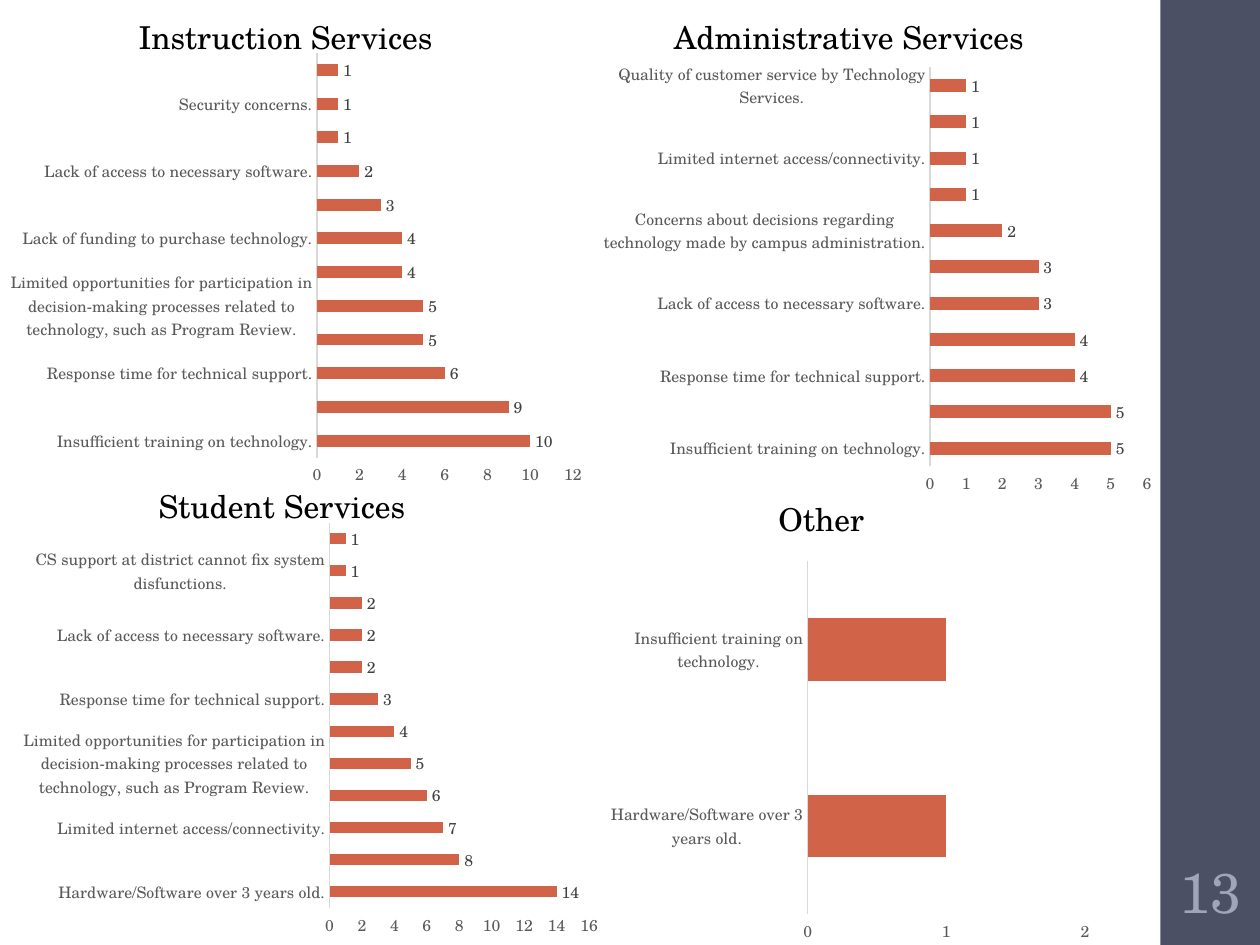
from dataclasses import dataclass

from lxml import etree
from pptx import Presentation
from pptx.chart.data import CategoryChartData
from pptx.dml.color import RGBColor
from pptx.enum.chart import XL_CHART_TYPE, XL_LABEL_POSITION, XL_TICK_MARK
from pptx.enum.shapes import MSO_SHAPE
from pptx.enum.text import MSO_ANCHOR, MSO_AUTO_SIZE, PP_ALIGN
from pptx.oxml.ns import qn
from pptx.util import Inches, Pt

BAR = XL_CHART_TYPE.BAR_CLUSTERED
OUTSIDE_END = XL_LABEL_POSITION.OUTSIDE_END
NO_TICK = XL_TICK_MARK.NONE
RECT = MSO_SHAPE.RECTANGLE
MIDDLE = MSO_ANCHOR.MIDDLE
TOP = MSO_ANCHOR.TOP
LEFT, CENTER = PP_ALIGN.LEFT, PP_ALIGN.CENTER
NO_FIT = MSO_AUTO_SIZE.NONE


@dataclass(frozen=True)
class Theme:
    font: str = "TeX Gyre Schola"
    band: str = "4B5064"
    number: str = "A0A5B8"
    heading: str = "000000"
    bar: str = "D16349"
    axis_text: str = "595959"
    axis_line: str = "D9D9D9"
    label: str = "404040"
    heading_size: float = 18
    number_size: float = 32
    chart_size: float = 10
    label_size: float = 9


# Answers shared by the four charts
TRAINING = "Insufficient training on technology."
HARDWARE = "Hardware/Software over 3 years old."
INTERNET = "Limited internet access/connectivity."
FUNDING = "Lack of funding to purchase technology."
PARTICIPATION = ("Limited opportunities for participation in decision-making "
                 "processes related to technology, such as Program Review.")
SECURITY = "Security concerns."
RESPONSE = "Response time for technical support."
QUALITY = "Quality of customer service by Technology Services."
SOFTWARE = "Lack of access to necessary software."
DECISIONS = ("Concerns about decisions regarding technology made by "
             "campus administration.")
DISTRICT = "CS support at district cannot fix system disfunctions."
UNNAMED = ""

# Bars from bottom to top; every second bar has no name
STUDENT = [(HARDWARE, 14), (UNNAMED, 8), (INTERNET, 7), (UNNAMED, 6),
           (PARTICIPATION, 5), (UNNAMED, 4), (RESPONSE, 3), (UNNAMED, 2),
           (SOFTWARE, 2), (UNNAMED, 2), (DISTRICT, 1), (UNNAMED, 1)]
INSTRUCTION = [(TRAINING, 10), (UNNAMED, 9), (RESPONSE, 6), (UNNAMED, 5),
               (PARTICIPATION, 5), (UNNAMED, 4), (FUNDING, 4), (UNNAMED, 3),
               (SOFTWARE, 2), (UNNAMED, 1), (SECURITY, 1), (UNNAMED, 1)]
ADMINISTRATIVE = [(TRAINING, 5), (UNNAMED, 5), (RESPONSE, 4), (UNNAMED, 4),
                  (SOFTWARE, 3), (UNNAMED, 3), (DECISIONS, 2), (UNNAMED, 1),
                  (INTERNET, 1), (UNNAMED, 1), (QUALITY, 1)]
OTHER_GROUP = [(HARDWARE, 1), (TRAINING, 1)]


class SlideBuilder:
    def __init__(self, s, theme):
        self.s, self.theme = s, theme

    def style_font(self, font, size, color):
        for name, value in {"name": self.theme.font, "size": Pt(size), "bold": False}.items():
            setattr(font, name, value)
        font.color.rgb = RGBColor.from_string(color)

    def band(self, *box):
        sp = self.s.shapes.add_shape(RECT, *map(Inches, box))
        sp.shadow.inherit = False
        sp.fill.solid()
        sp.fill.fore_color.rgb = RGBColor.from_string(self.theme.band)
        sp.line.fill.background()

    def text(self, sp, text, box, size, color, align=LEFT, **frame):
        sp.left, sp.top, sp.width, sp.height = map(Inches, box)
        tf = sp.text_frame
        for name, value in frame.items():
            setattr(tf, name, value)
        p = tf.paragraphs[0]
        p.alignment = align
        r = p.add_run()
        r.text = text
        self.style_font(r.font, size, color)

    def new_box(self):
        return self.s.shapes.add_textbox(0, 0, 0, 0)

    def heading(self, text, box, sp=None):
        self.text(sp or self.new_box(), text, box, self.theme.heading_size,
                  self.theme.heading, word_wrap=False, auto_size=NO_FIT,
                  vertical_anchor=TOP)

    def page_number(self, text, box):
        side = Inches(0.03)
        self.text(self.new_box(), text, box, self.theme.number_size,
                  self.theme.number, CENTER, word_wrap=True,
                  vertical_anchor=MIDDLE, margin_left=side, margin_right=side)

    def bar_chart(self, rows, box, labels=True):
        th = self.theme
        data = CategoryChartData()
        data.categories = [name for name, _ in rows]
        data.add_series("Series 1", [count for _, count in rows])
        chart = self.s.shapes.add_chart(BAR, *map(Inches, box), data).chart
        chart.has_title = chart.has_legend = False
        self.style_font(chart.font, th.chart_size, th.heading)

        # Axes
        for axis in (chart.category_axis, chart.value_axis):
            for name, value in {"major_tick_mark": NO_TICK, "minor_tick_mark": NO_TICK,
                                "has_major_gridlines": False}.items():
                setattr(axis, name, value)
            self.style_font(axis.tick_labels.font, th.label_size, th.axis_text)
        line = chart.category_axis.format.line
        line.width = Pt(0.75)
        line.color.rgb = RGBColor.from_string(th.axis_line)
        chart.value_axis.format.line.fill.background()

        # Bars and their values
        plot = chart.plots[0]
        plot.gap_width = 182
        plot.vary_by_categories = False
        fill = plot.series[0].format.fill
        fill.solid()
        fill.fore_color.rgb = RGBColor.from_string(th.bar)
        if labels:
            plot.has_data_labels = True
            dl = plot.data_labels
            dl.show_value = True
            dl.position = OUTSIDE_END
            self.style_font(dl.font, th.label_size, th.label)
        return chart

    def place_plot(self, chart, x, y, w, h):
        area = chart.plots[0]._element.getparent()
        for old in area.findall(qn("c:layout")):
            area.remove(old)
        layout = etree.Element(qn("c:layout"))
        area.insert(0, layout)
        manual = etree.SubElement(layout, qn("c:manualLayout"))
        values = {"layoutTarget": "inner", "xMode": "edge", "yMode": "edge",
                  "x": x, "y": y, "w": w, "h": h}
        for name, value in values.items():
            etree.SubElement(manual, qn(f"c:{name}")).set("val", str(value))


def main():
    prs = Presentation()
    prs.slide_width, prs.slide_height = Inches(10), Inches(7.5)
    s = prs.slides.add_slide(prs.slide_layouts[5])
    b = SlideBuilder(s, Theme())

    # Side band with the page number
    b.band(9.21, 0, 0.8, 7.5)
    b.page_number("13", (9.23, 6.75, 0.75, 0.65))

    # One chart for each group
    b.bar_chart(STUDENT, (0.09, 4.08, 4.75, 3.42))
    b.bar_chart(INSTRUCTION, (-0.01, 0.35, 4.72, 3.58))
    b.bar_chart(ADMINISTRATIVE, (4.7, 0.42, 4.53, 3.58))
    other = b.bar_chart(OTHER_GROUP, (4.8, 4.29, 3.93, 3.26), labels=False)
    b.place_plot(other, 0.41, 0.05, 0.56, 0.86)
    for name, value in {"minimum_scale": 0, "maximum_scale": 2, "major_unit": 1}.items():
        setattr(other.value_axis, name, value)

    # Headings
    b.heading("Instruction Services", (1, 0.09, 2.55, 0.4), s.shapes.title)
    b.heading("Administrative Services", (5.25, 0.09, 3.01, 0.4))
    b.heading("Student Services", (1.16, 3.82, 2.18, 0.4))
    b.heading("Other", (6.08, 3.92, 0.89, 0.4))

    # Bring the title in front of the charts
    tree = s.shapes.title._element.getparent()
    tree.append(s.shapes.title._element)

    prs.save("out.pptx")


if __name__ == "__main__":
    main()
